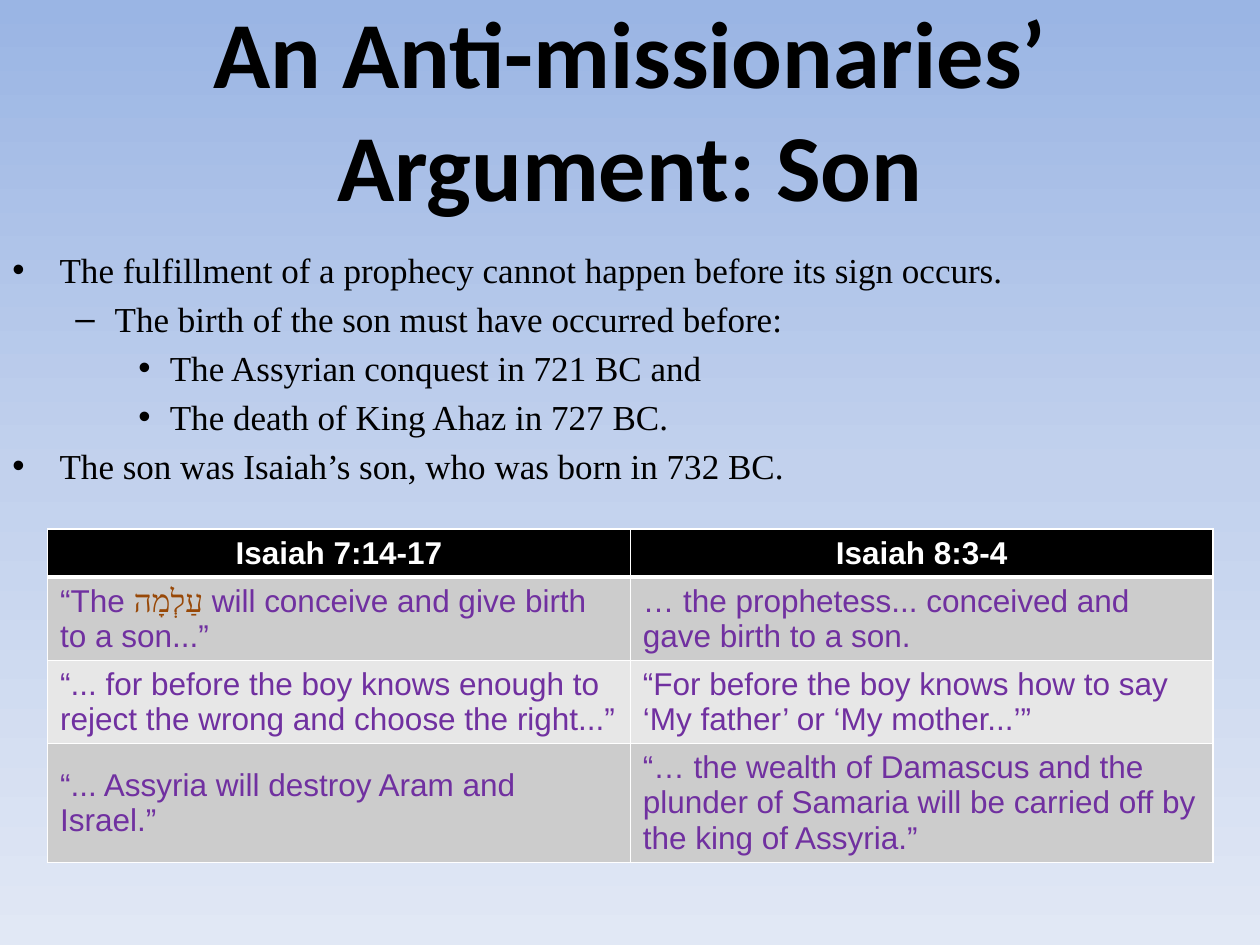
import copy
from dataclasses import dataclass

import pptx
import pptx.dml.color
import pptx.enum.text
import pptx.oxml
import pptx.oxml.ns
import pptx.util
from lxml import etree

Pt = pptx.util.Pt
RGBColor = pptx.dml.color.RGBColor
Align = pptx.enum.text.PP_ALIGN
Anchor = pptx.enum.text.MSO_ANCHOR
qn = pptx.oxml.ns.qn

BLACK = RGBColor(0x00, 0x00, 0x00)
WHITE = RGBColor(0xFF, 0xFF, 0xFF)
PURPLE = RGBColor(0x70, 0x30, 0xA0)
BROWN = RGBColor(0x98, 0x48, 0x07)
DARK_BAND = RGBColor(0xCC, 0xCC, 0xCC)
LIGHT_BAND = RGBColor(0xE7, 0xE7, 0xE7)
SKY = [RGBColor(0x9A, 0xB5, 0xE4), RGBColor(0xC2, 0xD1, 0xED), RGBColor(0xE1, 0xE8, 0xF5)]


@dataclass
class Span:
    text: str
    size: float = 18
    font: str = "Arial"
    color: RGBColor = PURPLE
    bold: bool = False


@dataclass
class Level:
    margin: float
    hanging: float
    bullet: str


LEVELS = [Level(27, 27, "•"), Level(58.5, 22.5, "–"), Level(90, 18, "•")]

POINTS = [
    (0, "The fulfillment of a prophecy cannot happen before its sign occurs."),
    (1, "The birth of the son must have occurred before:"),
    (2, "The Assyrian conquest in 721 BC and"),
    (2, "The death of King Ahaz in 727 BC."),
    (0, "The son was Isaiah’s son, who was born in 732 BC."),
]

HEADINGS = ["Isaiah 7:14-17", "Isaiah 8:3-4"]
VERSES = [
    [[Span("“The "), Span("עַלְמָה", font="Times New Roman", color=BROWN),
      Span(" will conceive and give birth to a son...”")],
     [Span("… the prophetess... conceived and gave birth to a son.")]],
    [[Span("“... for before the boy knows enough to reject the wrong and choose the right...”")],
     [Span("“For before the boy knows how to say ‘My father’ or ‘My mother...’”")]],
    [[Span("“... Assyria will destroy Aram and Israel.”")],
     [Span("“… the wealth of Damascus and the plunder of Samaria will be carried off "
           "by the king of Assyria.”")]],
]
ROW_HEIGHTS = [27.4, 47.4, 47.4, 68]


def add_span(para, span: Span) -> None:
    run = para.add_run()
    run.text = span.text
    run.font.size = Pt(span.size)
    run.font.name = span.font
    run.font.bold = span.bold
    run.font.color.rgb = span.color
    # The same face for right-to-left scripts
    etree.SubElement(run.font._element, qn("a:cs"), typeface=span.font)


def paint_background(page) -> None:
    fill = page.background.fill
    fill.gradient()
    fill.gradient_angle = 270
    stops = page.element.xpath(".//a:gsLst")[0]
    stops.insert(1, copy.deepcopy(stops[0]))
    for index, (stop, color) in enumerate(zip(fill.gradient_stops, SKY)):
        stop.color.rgb = color
        stop.position = index / 2


def write_title(page) -> None:
    box = page.shapes.title
    box.left, box.top, box.width, box.height = Pt(0), Pt(0), Pt(720), Pt(122.4)
    frame = box.text_frame
    frame.auto_size = pptx.enum.text.MSO_AUTO_SIZE.NONE
    frame.vertical_anchor = Anchor.MIDDLE
    para = frame.paragraphs[0]
    para.alignment = Align.CENTER
    add_span(para, Span("An Anti-missionaries’ Argument: Son", 54, "Calibri", BLACK, True))


def write_points(page) -> None:
    box = page.shapes.add_textbox(Pt(0), Pt(138.24), Pt(720), Pt(143.28))
    frame = box.text_frame
    frame.word_wrap = True
    for index, (depth, text) in enumerate(POINTS):
        para = frame.add_paragraph() if index else frame.paragraphs[0]
        level = LEVELS[depth]
        para.level = depth
        para.space_before = Pt(4)
        properties = para._p.get_or_add_pPr()
        properties.set("marL", str(Pt(level.margin)))
        properties.set("indent", str(-Pt(level.hanging)))
        etree.SubElement(properties, qn("a:buFont"), typeface="Arial")
        etree.SubElement(properties, qn("a:buChar"), char=level.bullet)
        add_span(para, Span(text, 20, "Times New Roman", BLACK))


def add_borders(cell, bottom: float) -> None:
    properties = cell._tc.get_or_add_tcPr()
    for side, width in (("L", 1), ("R", 1), ("T", 1), ("B", bottom)):
        line = etree.SubElement(properties, qn("a:ln" + side), w=str(Pt(width)))
        fill = etree.SubElement(line, qn("a:solidFill"))
        etree.SubElement(fill, qn("a:srgbClr"), val=str(WHITE))


def fill_cell(cell, spans: list[Span], color: RGBColor, align: Align, bottom: float = 1) -> None:
    add_borders(cell, bottom)
    cell.fill.solid()
    cell.fill.fore_color.rgb = color
    cell.vertical_anchor = Anchor.MIDDLE
    para = cell.text_frame.paragraphs[0]
    para.alignment = align
    for span in spans:
        add_span(para, span)


def draw_table(page) -> None:
    table = page.shapes.add_table(
        len(ROW_HEIGHTS), len(HEADINGS), Pt(27.2), Pt(302.4), Pt(666), Pt(sum(ROW_HEIGHTS))
    ).table
    for row, height in zip(table.rows, ROW_HEIGHTS):
        row.height = Pt(height)
    for column, heading in enumerate(HEADINGS):
        span = Span(heading, color=WHITE, bold=True)
        fill_cell(table.cell(0, column), [span], BLACK, Align.CENTER, bottom=3)
    for row, verses in enumerate(VERSES, start=1):
        band = DARK_BAND if row % 2 else LIGHT_BAND
        for column, spans in enumerate(verses):
            fill_cell(table.cell(row, column), spans, band, Align.LEFT)


def main() -> None:
    deck = pptx.Presentation()
    deck.slide_width, deck.slide_height = Pt(720), Pt(540)
    page = deck.slides.add_slide(deck.slide_layouts[5])
    paint_background(page)
    write_title(page)
    draw_table(page)
    write_points(page)
    deck.save("out.pptx")


if __name__ == "__main__":
    main()
